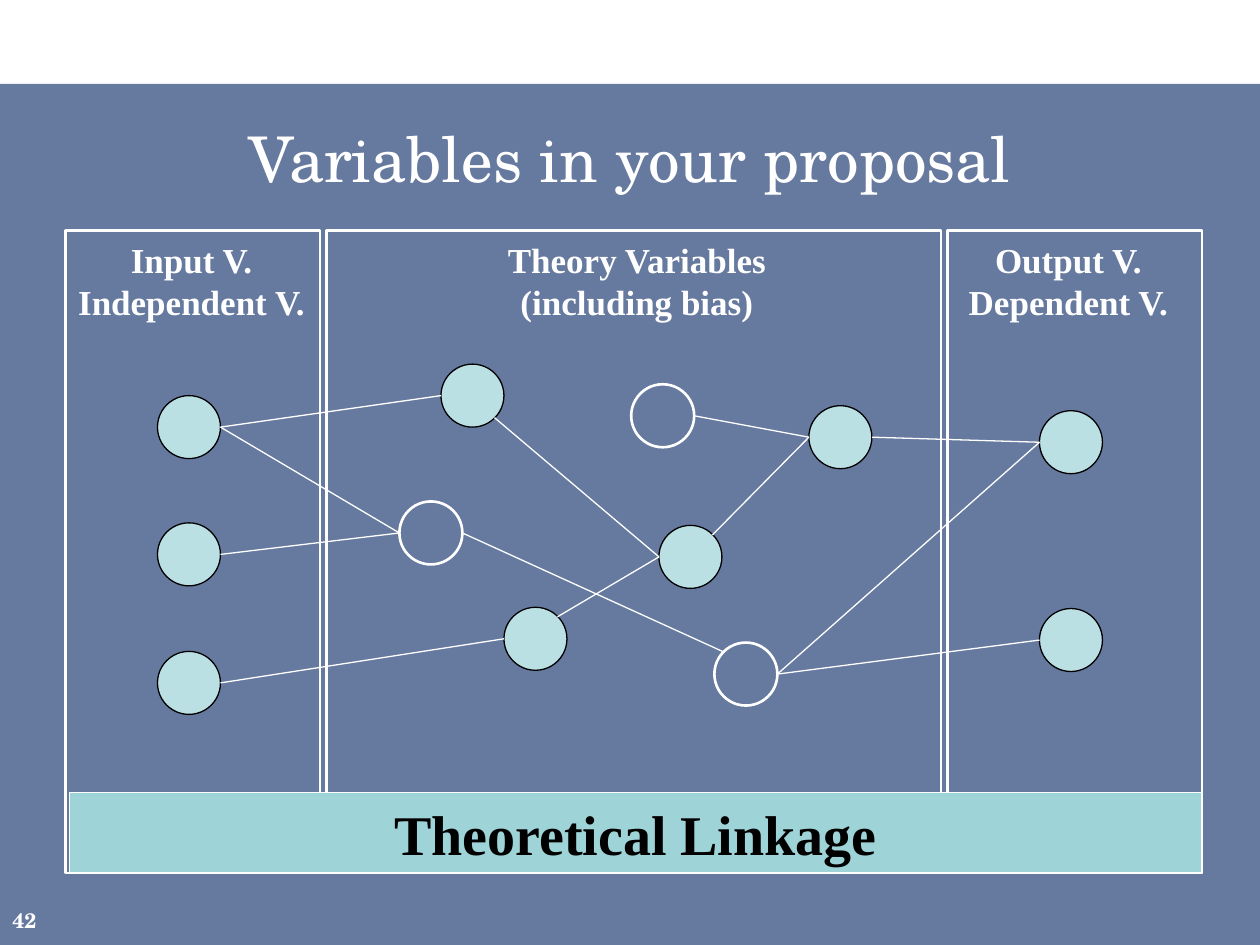
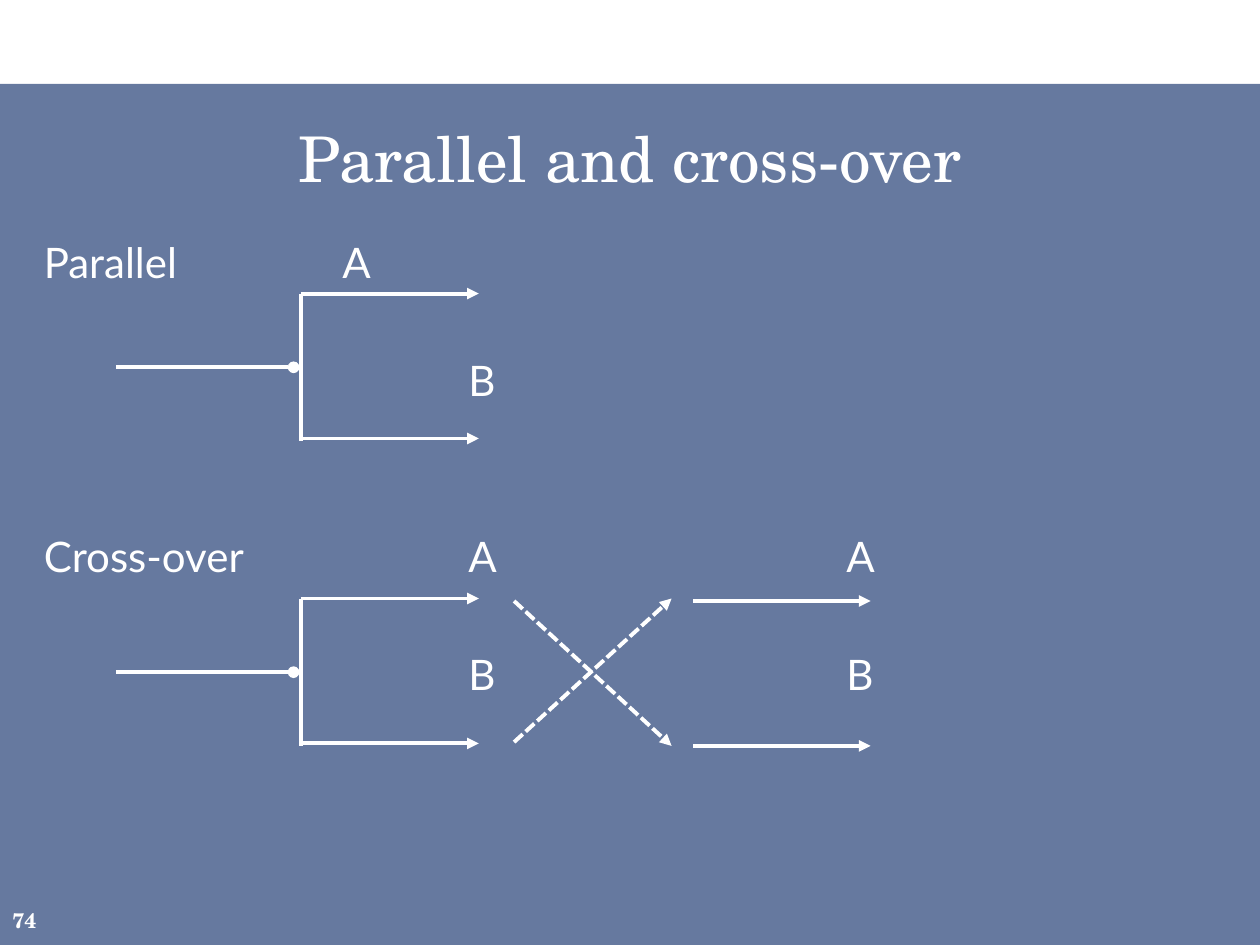
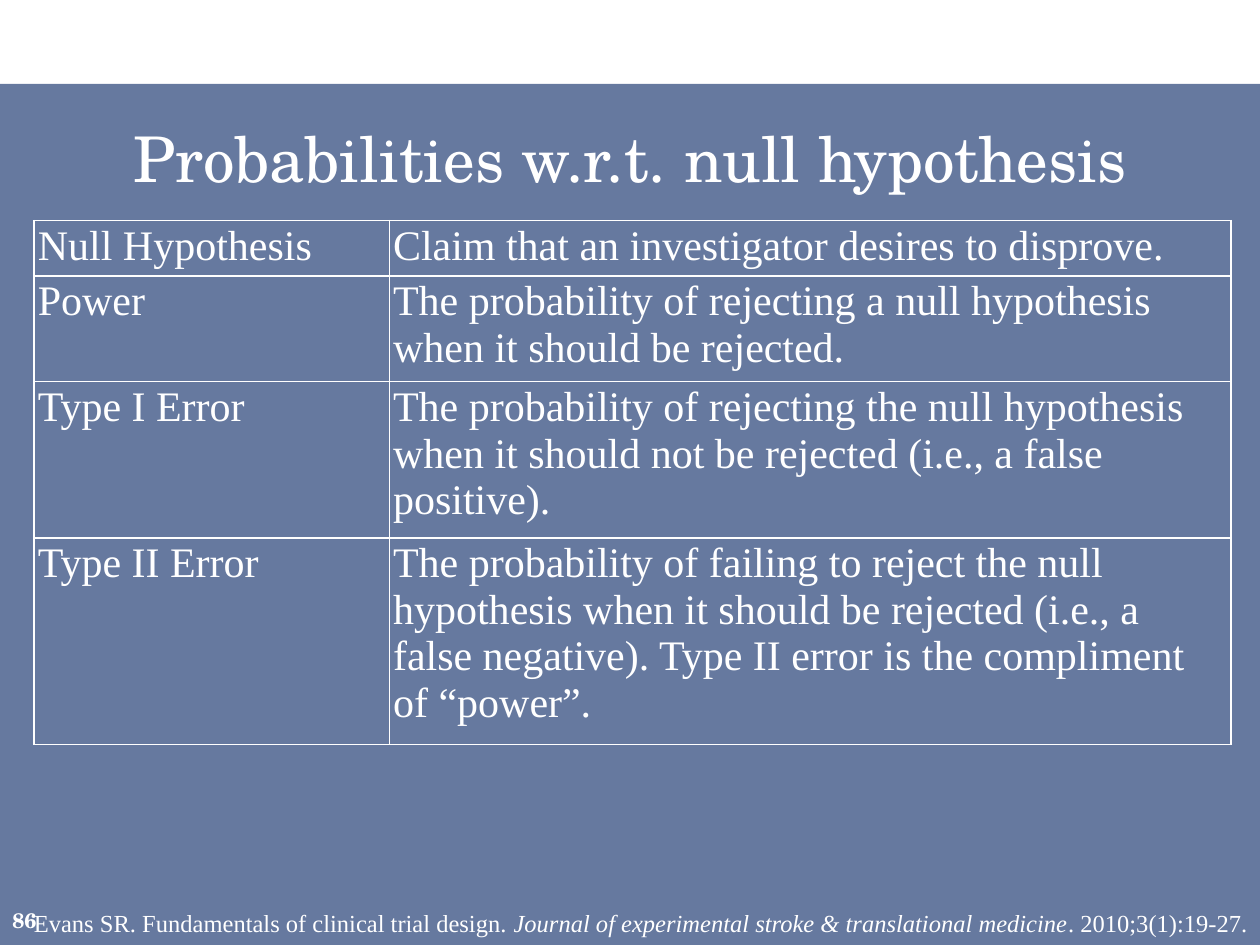
"""Builds three slides on study variables, trial designs and hypothesis errors."""
from lxml import etree
from pptx import Presentation, util as u
from pptx.dml.color import RGBColor
from pptx.enum import dml, shapes, text
from pptx.oxml.ns import qn

COLUMNS, ROWS = 100, 75
COLORS = {"band": "002060", "white": "FFFFFF", "black": "000000", "bar": "9ED3D7", "node": "BBE0E3"}
TITLE_FONT, BODY_FONT, SERIF_FONT = "TeX Gyre Schola", "Lato", "Times New Roman"
DIAMETER = 5
SIDES = {"left": (0, 0.5), "right": (1, 0.5), "top left": (0.15, 0.15),
         "top right": (0.85, 0.15), "bottom right": (0.85, 0.85)}


class Deck:
    """Holds the shared style and draws on the current slide in grid units."""

    def __init__(self):
        """Start an empty presentation and size its grid."""
        self.presentation = Presentation()
        self.presentation.slide_width = u.Inches(10)
        self.presentation.slide_height = u.Inches(7.5)
        self.slide = None

    def x(self, columns):
        """Return a horizontal length."""
        return u.Emu(round(self.presentation.slide_width * columns / COLUMNS))

    def y(self, rows):
        """Return a vertical length."""
        return u.Emu(round(self.presentation.slide_height * rows / ROWS))

    def frame(self, left, top, width, height):
        """Return a place on the grid as lengths."""
        return self.x(left), self.y(top), self.x(width), self.y(height)

    def color(self, name):
        """Return a named colour."""
        return RGBColor.from_string(COLORS[name])

    def page(self, title, number):
        """Add a slide with its band, title and number."""
        self.slide = self.presentation.slides.add_slide(self.presentation.slide_layouts[6])
        band = self.shape((0, 6.67, 100, 68.33), fill="band")
        fill_color = band._element.spPr.find(qn("a:solidFill"))[0]
        etree.SubElement(fill_color, qn("a:alpha"), val="60000")
        self.text((2.5, 8.33, 95, 8.33), [title], 36, TITLE_FONT, align="CENTER", anchor="MIDDLE")
        self.text((0, 71, 5, 4), [str(number)], 12, TITLE_FONT, bold=True, anchor="MIDDLE")

    def shape(self, place, kind="RECTANGLE", fill=None, line=None, weight=0.75):
        """Add a preset shape."""
        shape = self.slide.shapes.add_shape(getattr(shapes.MSO_SHAPE, kind), *self.frame(*place))
        shape.shadow.inherit = False
        self.paint(shape.fill, fill)
        self.paint(shape.line.fill, line)
        if line:
            shape.line.width = u.Pt(weight)
        return shape

    def paint(self, fill, name):
        """Make a fill solid, or empty when no colour is named."""
        if name:
            fill.solid()
            fill.fore_color.rgb = self.color(name)
        else:
            fill.background()

    def run(self, paragraph, words, size, font, color="white", bold=False, italic=False):
        """Add one styled run."""
        run = paragraph.add_run()
        run.text = words
        run.font.size, run.font.name = u.Pt(size), font
        run.font.bold, run.font.italic = bold, italic
        run.font.color.rgb = self.color(color)

    def paragraphs(self, frame, lines, size, font, align="LEFT", anchor="TOP", wrap=True, **style):
        """Fill a text frame; a line is a string or a list of (words, italic) runs."""
        frame.word_wrap = wrap
        frame.vertical_anchor = getattr(text.MSO_ANCHOR, anchor)
        for index, line in enumerate(lines):
            paragraph = frame.add_paragraph() if index else frame.paragraphs[0]
            paragraph.alignment = getattr(text.PP_ALIGN, align)
            for words, italic in [(line, False)] if isinstance(line, str) else line:
                self.run(paragraph, words, size, font, italic=italic, **style)

    def text(self, place, lines, size, font, **style):
        """Add a text box."""
        box = self.slide.shapes.add_textbox(*self.frame(*place))
        self.paragraphs(box.text_frame, lines, size, font, **style)
        return box

    def tabbed(self, place, rows, size, font):
        """Add a text box of (words, tab stops, points before) rows."""
        box = self.text(place, [words for words, _, _ in rows], size, font)
        for paragraph, (_, stops, before) in zip(box.text_frame.paragraphs, rows):
            if before:
                paragraph.space_before = u.Pt(before)
            tabs = etree.SubElement(paragraph._p.get_or_add_pPr(), qn("a:tabLst"))
            for stop in stops:
                etree.SubElement(tabs, qn("a:tab"), pos=str(self.x(stop)), algn="l")

    def line(self, start, end, weight=0.75, tail=None, dashed=False):
        """Add a straight connector."""
        connector = self.slide.shapes.add_connector(
            shapes.MSO_CONNECTOR.STRAIGHT, self.x(start[0]), self.y(start[1]), self.x(end[0]), self.y(end[1]))
        connector.line.width = u.Pt(weight)
        connector.line.color.rgb = self.color("white")
        if dashed:
            connector.line.dash_style = dml.MSO_LINE.SQUARE_DOT
        properties = connector._element.spPr
        if tail:
            etree.SubElement(properties.find(qn("a:ln")), qn("a:tailEnd"), type=tail)
        etree.SubElement(properties, qn("a:effectLst"))

    def table(self, place, widths, heights, rows, size, font):
        """Add an unfilled table with thin borders."""
        graphic = self.slide.shapes.add_table(len(rows), len(widths), *self.frame(*place))
        table = graphic.table
        table.first_row = table.horz_banding = False
        for column, width in zip(table.columns, widths):
            column.width = self.x(width)
        for row, height, words in zip(table.rows, heights, rows):
            row.height = self.y(height)
            for cell, entry in zip(row.cells, words):
                cell.margin_left = cell.margin_right = self.x(0.3)
                cell.margin_top = cell.margin_bottom = self.y(0.2)
                self.paragraphs(cell.text_frame, [entry], size, font)
                self.border(cell)
                cell.fill.background()

    def border(self, cell):
        """Draw the four edges of a cell."""
        properties = cell._tc.get_or_add_tcPr()
        for edge in ("lnL", "lnR", "lnT", "lnB"):
            line = etree.SubElement(properties, qn(f"a:{edge}"), w=str(u.Pt(1)))
            fill = etree.SubElement(line, qn("a:solidFill"))
            etree.SubElement(fill, qn("a:srgbClr"), val=COLORS["white"])


def variables(deck):
    """Draw the network of input, theory and output variables."""
    deck.page("Variables in your proposal", 42)
    panels = [(5.2, 20.2, 5.1, 20.2, ["Input V.", "Independent V."]),
              (75.2, 20.2, 75.8, 18, ["Output V.", "Dependent V."]),
              (25.9, 48.8, 39.2, 22.7, ["Theory Variables", "(including bias)"])]
    for left, width, heading_left, heading_width, heading in panels:
        deck.shape((left, 18.3, width, 51), line="white", weight=1.5)
        deck.text((heading_left, 18.4, heading_width, 7.7), heading, 20, SERIF_FONT,
                  align="CENTER", wrap=False, bold=True)
    bar = deck.shape((5.5, 62.9, 89.9, 6.4), fill="bar", line="white")
    deck.paragraphs(bar.text_frame, ["Theoretical Linkage"], 32, SERIF_FONT,
                    align="CENTER", anchor="MIDDLE", color="black", bold=True)

    measured = {"input 1": (12.5, 31.4), "input 2": (12.5, 41.5), "input 3": (12.5, 51.7),
                "output 1": (82.5, 32.6), "output 2": (82.5, 48.3),
                "theory 1": (35, 28.9), "theory 2": (52.3, 41.7),
                "theory 3": (40, 48.2), "theory 4": (64.2, 32.2)}
    biases = {"bias 1": (50.1, 30.5), "bias 2": (31.7, 39.8), "bias 3": (56.7, 51)}
    for place in measured.values():
        deck.shape((*place, DIAMETER, DIAMETER), "OVAL", "node", "black")
    for place in biases.values():
        deck.shape((*place, DIAMETER, DIAMETER), "OVAL", line="white", weight=1.5)

    nodes = measured | biases

    def point(name, side):
        """Return the point on a node's edge."""
        return [start + DIAMETER * share for start, share in zip(nodes[name], SIDES[side])]

    links = [("input 1", "right", "theory 1", "left"), ("input 1", "right", "bias 2", "left"),
             ("input 2", "right", "bias 2", "left"), ("input 3", "right", "theory 3", "left"),
             ("theory 2", "left", "theory 1", "bottom right"), ("theory 3", "top right", "theory 2", "left"),
             ("bias 1", "right", "theory 4", "left"), ("theory 2", "top right", "theory 4", "left"),
             ("bias 2", "right", "bias 3", "top left"), ("bias 3", "right", "output 2", "left"),
             ("bias 3", "right", "output 1", "left"), ("theory 4", "right", "output 1", "left")]
    for source, source_side, target, target_side in links:
        deck.line(point(source, source_side), point(target, target_side))


def designs(deck):
    """Draw the parallel and cross-over trial designs."""
    deck.page("Parallel and cross-over", 74)
    near, middle, far = 23.7, 33.7, 63.7
    deck.tabbed((2.5, 18.3, 95, 54.2),
                [("Parallel\tA", [near], 0), ("\tB", [middle], 38.4),
                 ("Cross-over\tA\tA", [middle, far], 72), ("\tB\tB", [middle, far], 38.4)],
                24, BODY_FONT)
    weight, arm, gap = 2.25, 14.1, 11.5
    for top in (23.3, 47.5):
        deck.line((9.2, top + 5.85), (23.3, top + 5.85), weight, "oval")
        deck.line((23.9, top), (23.9, top + 11.7), weight)
        for level in (top, top + gap):
            deck.line((23.9, level), (23.9 + arm, level), weight, "triangle")
    for level in (47.7, 47.7 + gap):
        deck.line((55, level), (55 + arm, level), weight, "triangle")
    for start, end in ((47.7, 59.2), (58.9, 47.5)):
        deck.line((40.8, start), (53.3, end), weight, "triangle", dashed=True)


def probabilities(deck):
    """Tabulate the terms around the null hypothesis."""
    deck.page("Probabilities w.r.t. null hypothesis", 86)
    rows = [("Null Hypothesis", "Claim that an investigator desires to disprove."),
            ("Power", "The probability of rejecting a null hypothesis when it should be rejected."),
            ("Type I Error", "The probability of rejecting the null hypothesis when it should not be "
                             "rejected (i.e., a false positive)."),
            ("Type II Error", "The probability of failing to reject the null hypothesis when it should be "
                              "rejected (i.e., a false negative). Type II error is the compliment of “power”.")]
    deck.table((2.7, 17.5, 95, 38.6), (28.2, 66.8), (4, 8.1, 11.4, 15.1), rows, 24, SERIF_FONT)
    citation = [("Evans SR. Fundamentals of clinical trial design. ", False),
                ("Journal of experimental stroke & translational medicine", True),
                (". 2010;3(1):19-27.", False)]
    deck.text((0, 71.6, 100, 3.4), [citation], 14, SERIF_FONT, align="RIGHT")


def main():
    """Build and save the slides."""
    deck = Deck()
    for build in (variables, designs, probabilities):
        build(deck)
    deck.presentation.save("out.pptx")


if __name__ == "__main__":
    main()
